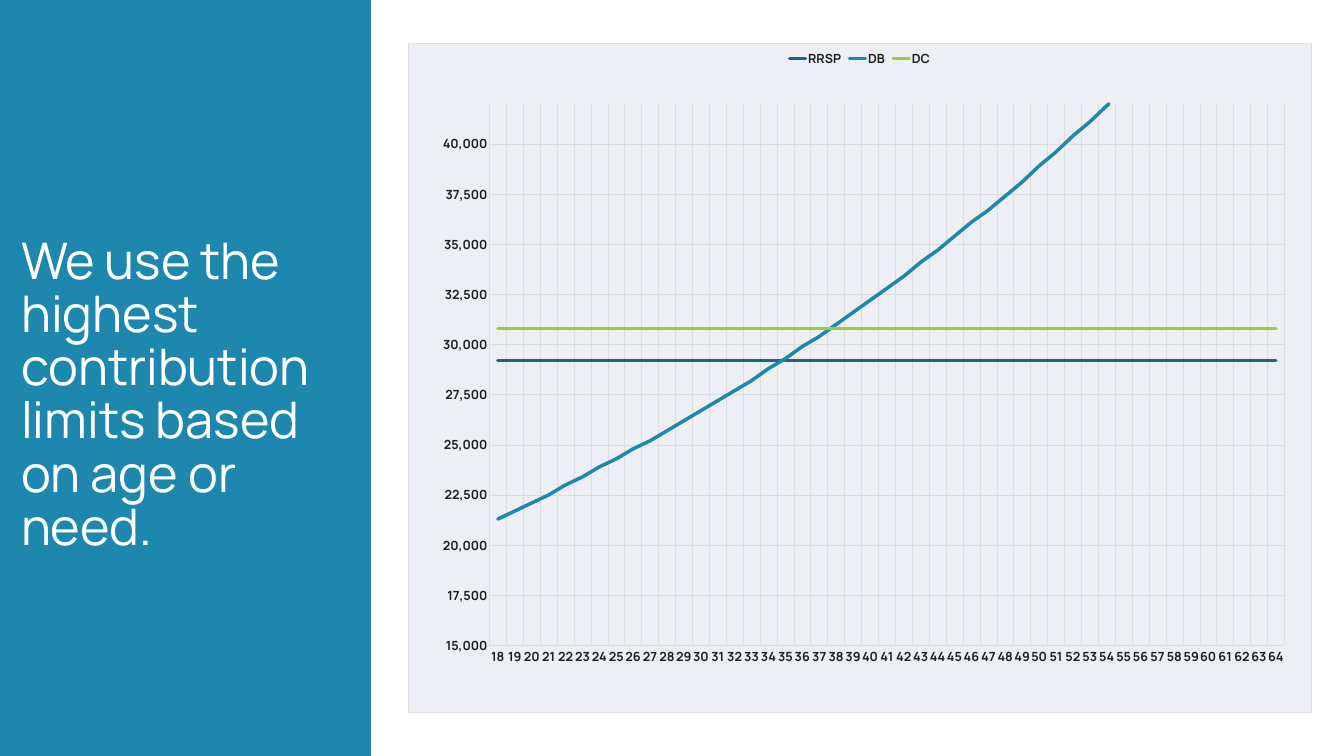
from lxml import etree
from pptx import Presentation
from pptx.chart.data import CategoryChartData
from pptx.dml.color import RGBColor
from pptx.enum.chart import XL_CHART_TYPE, XL_LEGEND_POSITION, XL_TICK_MARK
from pptx.enum.shapes import MSO_SHAPE
from pptx.enum.text import MSO_ANCHOR, PP_ALIGN
from pptx.oxml import parse_xml
from pptx.oxml.ns import nsdecls, qn
from pptx.util import Emu, Pt

EMU_PER_PX = 9144  # 100 px to the inch
LINE = XL_CHART_TYPE.LINE
LEGEND_TOP = XL_LEGEND_POSITION.TOP
NO_TICK = XL_TICK_MARK.NONE
RECTANGLE = MSO_SHAPE.RECTANGLE
MIDDLE = MSO_ANCHOR.MIDDLE
LEFT = PP_ALIGN.LEFT

FONT = "Manrope"
BLUE, NAVY, GREEN = "1E87AE", "176684", "9ACA41"
INK, GRID, PANEL, WHITE = "1F2023", "DCDDE0", "EDEFF4", "FFFFFF"

AGES = range(18, 65)
DB_LIMITS = [
    21300, 21700, 22100, 22500, 23000, 23400, 23900, 24300, 24800, 25200,
    25700, 26200, 26700, 27200, 27700, 28200, 28800, 29300, 29900, 30400,
    31000, 31600, 32200, 32800, 33400, 34100, 34700, 35400, 36100, 36700,
    37400, 38100, 38900, 39600, 40400, 41100, 41900, 42700, 43500, 44300,
    45200, 46000, 46900, 47800, 48700, 49600, 50600,
]
LIMITS = [
    ("RRSP", [29200] * len(AGES), NAVY),
    ("DB", DB_LIMITS, BLUE),
    ("DC", [30800] * len(AGES), GREEN),
]


def px(length):
    return Emu(length * EMU_PER_PX)


def color(hex_code):
    return RGBColor.from_string(hex_code)


def style_font(font, size, hex_code, bold=False):
    font.name = FONT
    font.size = Pt(size)
    font.bold = bold
    font.color.rgb = color(hex_code)


def add_panel(slide, left, top, width, height, fill):
    panel = slide.shapes.add_shape(RECTANGLE, px(left), px(top), px(width), px(height))
    panel.shadow.inherit = False
    panel.fill.solid()
    panel.fill.fore_color.rgb = color(fill)
    panel.line.fill.background()


def set_title(slide, text, left, top, width, height):
    title = slide.shapes.title
    title.left, title.top = px(left), px(top)
    title.width, title.height = px(width), px(height)
    frame = title.text_frame
    frame.text = text
    frame.word_wrap = True
    frame.vertical_anchor = MIDDLE
    message = frame.paragraphs[0]
    message.alignment = LEFT
    message.line_spacing = 0.88
    style_font(message.font, 72, WHITE)


def style_axis(axis):
    axis.major_tick_mark = NO_TICK
    axis.minor_tick_mark = NO_TICK
    axis.format.line.fill.background()
    axis.has_major_gridlines = True
    gridline = axis.major_gridlines.format.line
    gridline.color.rgb = color(GRID)
    gridline.width = Pt(0.75)
    style_font(axis.tick_labels.font, 18, INK, bold=True)


def style_series(series, hex_code):
    series.smooth = False
    stroke = series.format.line
    stroke.color.rgb = color(hex_code)
    stroke.width = Pt(5)
    series._element.find(f"{qn('c:spPr')}/{qn('a:ln')}").set("cap", "rnd")


def fill_chart_area(chart, fill, border):
    area = parse_xml(
        f'<c:spPr {nsdecls("c", "a")}>'
        f'<a:solidFill><a:srgbClr val="{fill}"/></a:solidFill>'
        f'<a:ln w="{Pt(0.75)}"><a:solidFill><a:srgbClr val="{border}"/></a:solidFill></a:ln>'
        "</c:spPr>"
    )
    chart._chartSpace.find(qn("c:chart")).addnext(area)


def place_plot(chart, **fractions):
    """Fix the inner plot area by fractions of the chart: x, y, w and h."""
    plot_area = chart._chartSpace.find(f"{qn('c:chart')}/{qn('c:plotArea')}")
    for automatic in plot_area.findall(qn("c:layout")):
        plot_area.remove(automatic)
    layout = etree.Element(qn("c:layout"))
    manual = etree.SubElement(layout, qn("c:manualLayout"))
    settings = {"layoutTarget": "inner", "xMode": "edge", "yMode": "edge", **fractions}
    for name, value in settings.items():
        etree.SubElement(manual, qn(f"c:{name}")).set("val", str(value))
    plot_area.insert(0, layout)


def add_limits_chart(slide, left, top, width, height):
    data = CategoryChartData(number_format="#,##0")
    data.categories = [str(age) for age in AGES]
    for name, limits, _ in LIMITS:
        data.add_series(name, limits)
    chart = slide.shapes.add_chart(
        LINE, px(left), px(top), px(width), px(height), data
    ).chart
    style_font(chart.font, 18, INK, bold=True)
    chart.has_title = False
    chart.has_legend = True
    chart.legend.position = LEGEND_TOP
    chart.legend.include_in_layout = False
    style_font(chart.legend.font, 18, INK, bold=True)

    style_axis(chart.category_axis)
    limit_axis = chart.value_axis
    style_axis(limit_axis)
    limit_axis.minimum_scale = 15000
    limit_axis.maximum_scale = 42000
    limit_axis.major_unit = 2500
    limit_axis.tick_labels.number_format = "#,##0"
    limit_axis.tick_labels.number_format_is_linked = False

    chart.plots[0].vary_by_categories = False
    for series, (_, _, hex_code) in zip(chart.plots[0].series, LIMITS):
        style_series(series, hex_code)
    fill_chart_area(chart, PANEL, GRID)
    place_plot(chart, x=0.09, y=0.09, w=0.88, h=0.81)


def main():
    deck = Presentation()
    deck.slide_width, deck.slide_height = px(2666), px(1500)
    slide = deck.slides.add_slide(deck.slide_layouts.get_by_name("Title Only"))
    add_panel(slide, 0, 0, 736, 1500, BLUE)
    add_limits_chart(slide, 809, 86, 1793, 1328)
    set_title(
        slide,
        "We use the highest contribution limits based on age or need.",
        32, 418, 704, 737,
    )
    # The title placeholder comes first by default; bring it in front of the panel.
    slide.shapes._spTree.append(slide.shapes.title._element)
    deck.save("out.pptx")


if __name__ == "__main__":
    main()
